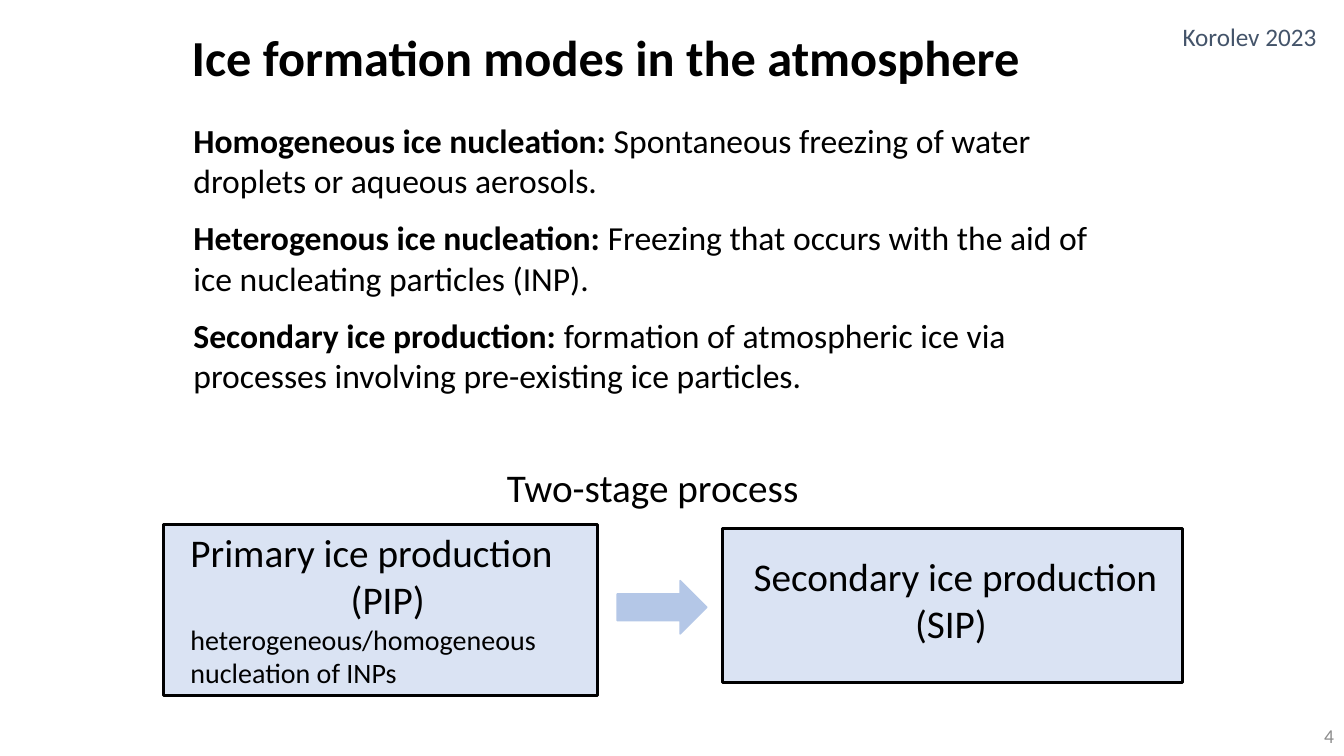
import pptx
import pptx.util
import pptx.dml.color
import pptx.enum.shapes
import pptx.enum.text

Inches = pptx.util.Inches
Pt = pptx.util.Pt
ALIGN = pptx.enum.text.PP_ALIGN
ANCHOR = pptx.enum.text.MSO_ANCHOR
SHAPE = pptx.enum.shapes.MSO_SHAPE


def color(hex_string):
    return pptx.dml.color.RGBColor.from_string(hex_string)


def write(frame, text, size=28, bold=False, hex_color="000000", align=ALIGN.LEFT,
          new_paragraph=True, space_after=0):
    """Add a run, in a new paragraph or at the end of the last one."""
    paragraph = frame.paragraphs[-1]
    if new_paragraph and paragraph.runs:
        paragraph = frame.add_paragraph()
    paragraph.alignment = align
    paragraph.space_before = Pt(0)
    paragraph.space_after = Pt(space_after)
    run = paragraph.add_run()
    run.text = text
    run.font.name = "Calibri"
    run.font.size = Pt(size)
    run.font.bold = bold
    run.font.color.rgb = color(hex_color)


presentation = pptx.Presentation()
presentation.slide_width = Inches(13.33)
presentation.slide_height = Inches(7.5)
slide = presentation.slides.add_slide(presentation.slide_layouts[5])

# Title
title = slide.shapes.title
title.left, title.top = Inches(1.22), Inches(0.21)
title.width, title.height = Inches(9.58), Inches(0.71)
title.text_frame.auto_size = pptx.enum.text.MSO_AUTO_SIZE.NONE
title.text_frame.vertical_anchor = ANCHOR.TOP
write(title.text_frame, "Ice formation modes in the atmosphere", size=36, bold=True,
      align=ALIGN.CENTER)

# Definitions of the three modes
modes = [
    ("Homogeneous ice nucleation: ",
     "Spontaneous freezing of water droplets or aqueous aerosols.", 12),
    ("Heterogenous ice nucleation: ",
     "Freezing that occurs with the aid of ice nucleating particles (INP).", 12),
    ("Secondary ice production: ",
     "formation of atmospheric ice via processes involving pre-existing ice particles.", 0),
]
definitions = slide.shapes.add_textbox(Inches(1.82), Inches(1.14), Inches(9.25), Inches(2.86))
definitions.text_frame.word_wrap = True
for term, meaning, gap in modes:
    write(definitions.text_frame, term, size=24, bold=True, space_after=gap)
    write(definitions.text_frame, meaning, size=24, new_paragraph=False, space_after=gap)

# The two stages: box position, text position, lines as (text, size, alignment)
stages = [
    ((1.62, 5.2, 4.31, 1.7), (1.79, 5.19, 4.11, 1.72),
     [("Primary ice production", 28, ALIGN.LEFT),
      ("(PIP)", 28, ALIGN.CENTER),
      ("heterogeneous/homogeneous", 20, ALIGN.LEFT),
      ("nucleation of INPs", 20, ALIGN.LEFT)]),
    ((7.17, 5.24, 4.56, 1.53), (7.32, 5.43, 4.31, 1.04),
     [("Secondary ice production", 28, ALIGN.CENTER),
      ("(SIP) ", 28, ALIGN.CENTER)]),
]
for box_place, label_place, lines in stages:
    stage = slide.shapes.add_group_shape()
    box = stage.shapes.add_shape(SHAPE.RECTANGLE, *map(Inches, box_place))
    box.shadow.inherit = False
    box.fill.solid()
    box.fill.fore_color.rgb = color("DAE3F3")
    box.line.color.rgb = color("000000")
    box.line.width = Pt(2.25)
    label = stage.shapes.add_textbox(*map(Inches, label_place))
    label.text_frame.word_wrap = True
    for line, size, align in lines:
        write(label.text_frame, line, size=size, align=align)

# Arrow from the first stage to the second
arrow = slide.shapes.add_shape(SHAPE.RIGHT_ARROW, Inches(6.12), Inches(5.76),
                               Inches(0.89), Inches(0.53))
arrow.shadow.inherit = False
arrow.fill.solid()
arrow.fill.fore_color.rgb = color("B4C7E7")
arrow.line.color.rgb = color("B4C7E7")
arrow.line.width = Pt(1)

# Diagram heading and citation
heading = slide.shapes.add_textbox(Inches(4.93), Inches(4.55), Inches(3.12), Inches(0.57))
heading.text_frame.word_wrap = False
write(heading.text_frame, "Two-stage process")

citation = slide.shapes.add_textbox(Inches(11.63), Inches(0.16), Inches(1.55), Inches(0.4))
citation.text_frame.word_wrap = False
write(citation.text_frame, "Korolev 2023", size=18, hex_color="44546A")

# Page number
page_number = slide.shapes.add_textbox(Inches(10.33), Inches(7.1), Inches(3), Inches(0.4))
page_number.text_frame.word_wrap = True
page_number.text_frame.vertical_anchor = ANCHOR.MIDDLE
write(page_number.text_frame, "4", size=14, hex_color="8C8C8C", align=ALIGN.RIGHT)

presentation.save("out.pptx")
